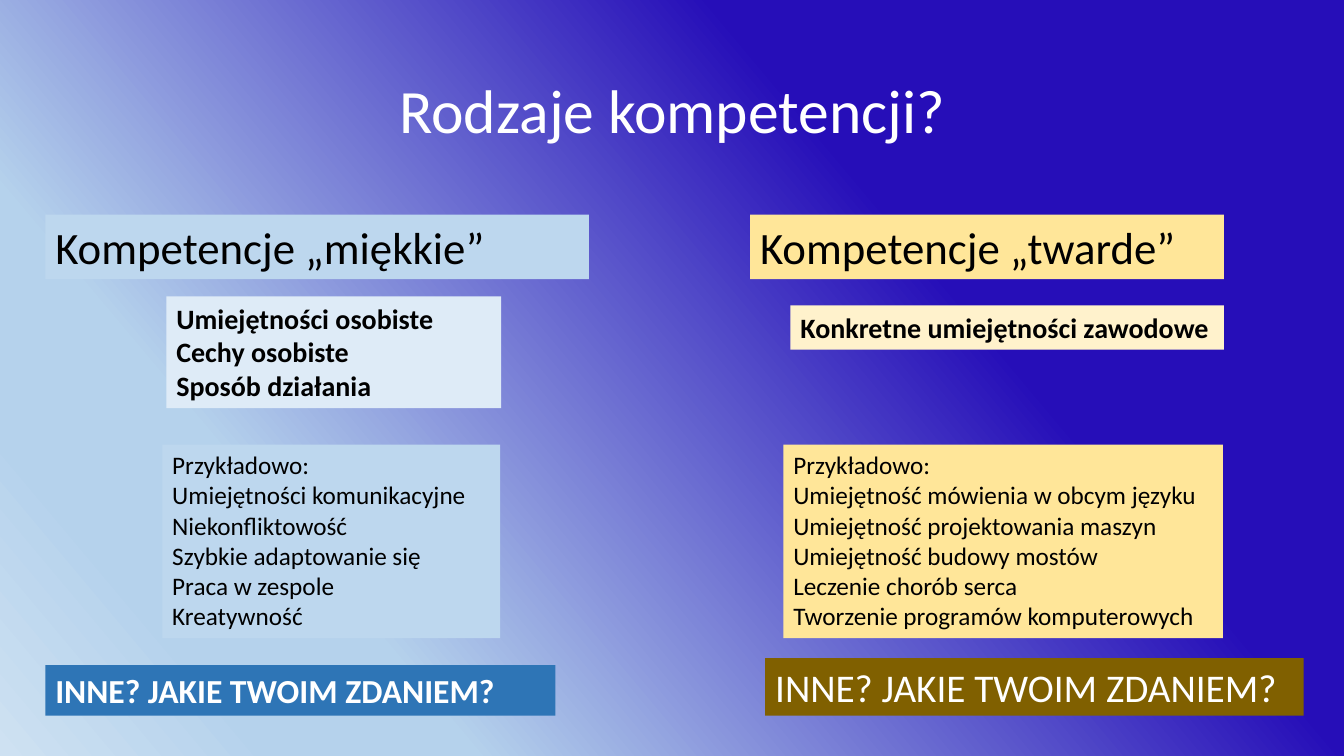
from copy import deepcopy

from pptx import Presentation
from pptx.dml.color import RGBColor
from pptx.enum.text import MSO_ANCHOR, MSO_AUTO_SIZE, PP_ALIGN
from pptx.oxml.ns import qn
from pptx.util import Inches, Pt

FONT = "Calibri"
BLACK = RGBColor(0x00, 0x00, 0x00)
WHITE = RGBColor(0xFF, 0xFF, 0xFF)
SKY = RGBColor(0xBD, 0xD7, 0xEE)
PALE_SKY = RGBColor(0xDE, 0xEB, 0xF7)
BLUE = RGBColor(0x2E, 0x75, 0xB6)
SAND = RGBColor(0xFF, 0xE6, 0x99)
PALE_SAND = RGBColor(0xFF, 0xF2, 0xCC)
BROWN = RGBColor(0x80, 0x60, 0x00)
GRADIENT = [
    (0.32, RGBColor(0x26, 0x0E, 0xB8)),
    (0.76, RGBColor(0xB5, 0xD2, 0xEC)),
    (0.86, RGBColor(0xB5, 0xD2, 0xEC)),
    (1.0, RGBColor(0xCE, 0xE1, 0xF2)),
]

COLUMN_TOP = 2.13
QUESTION = "INNE? JAKIE TWOIM ZDANIEM?"
SOFT_SKILLS = [
    ((0, 0, 5.39, 0.64), SKY, 32, False, BLACK, ["Kompetencje „miękkie”"]),
    ((1.2, 0.81, 3.32, 1.11), PALE_SKY, 20, True, BLACK,
     ["Umiejętności osobiste", "Cechy osobiste", "Sposób działania"]),
    ((1.16, 2.28, 3.35, 1.92), SKY, 18, False, BLACK,
     ["Przykładowo:", "Umiejętności komunikacyjne", "Niekonfliktowość",
      "Szybkie adaptowanie się", "Praca w zespole", "Kreatywność"]),
    ((0, 4.47, 5.06, 0.5), BLUE, 24, True, WHITE, [QUESTION]),
]
HARD_SKILLS = [
    ((0, 0, 4.7, 0.64), SAND, 32, False, BLACK, ["Kompetencje „twarde”"]),
    ((0.4, 0.9, 4.3, 0.44), PALE_SAND, 20, True, BLACK,
     ["Konkretne umiejętności zawodowe"]),
    ((0.33, 2.28, 4.36, 1.92), SAND, 18, False, BLACK,
     ["Przykładowo:", "Umiejętność mówienia w obcym języku",
      "Umiejętność projektowania maszyn", "Umiejętność budowy mostów",
      "Leczenie chorób serca", "Tworzenie programów komputerowych"]),
    ((0.15, 4.4, 5.34, 0.57), BROWN, 28, False, WHITE, [QUESTION]),
]


def format_text(paragraph, size, color, bold=False):
    for run in paragraph.runs:
        run.font.name = FONT
        run.font.size = Pt(size)
        run.font.bold = bold
        run.font.color.rgb = color


def paint_background(slide):
    fill = slide.background.fill
    fill.gradient()
    fill.gradient_angle = 220
    stop_list = next(slide.element.iter(qn("a:gsLst")))
    while len(stop_list) < len(GRADIENT):
        stop_list.append(deepcopy(stop_list[0]))
    for stop, (position, color) in zip(fill.gradient_stops, GRADIENT):
        stop.position = position
        stop.color.rgb = color


def add_heading(slide, left, top, width, height):
    heading = slide.shapes.title
    heading.left, heading.top = Inches(left), Inches(top)
    heading.width, heading.height = Inches(width), Inches(height)
    heading.text_frame.text = "Rodzaje kompetencji?"
    heading.text_frame.vertical_anchor = MSO_ANCHOR.MIDDLE
    paragraph = heading.text_frame.paragraphs[0]
    paragraph.alignment = PP_ALIGN.CENTER
    paragraph.line_spacing = 0.9
    format_text(paragraph, 44, WHITE)


def add_panel(slide, left, top, width, height, fill, size, bold, color, lines):
    panel = slide.shapes.add_textbox(
        Inches(left), Inches(top), Inches(width), Inches(height))
    panel.fill.solid()
    panel.fill.fore_color.rgb = fill
    frame = panel.text_frame
    frame.word_wrap = True
    frame.auto_size = MSO_AUTO_SIZE.SHAPE_TO_FIT_TEXT
    frame.text = "\n".join(lines)
    for paragraph in frame.paragraphs:
        format_text(paragraph, size, color, bold)


def add_skill_column(slide, left, top, panels):
    for (dx, dy, width, height), *style in panels:
        add_panel(slide, left + dx, top + dy, width, height, *style)


def main():
    deck = Presentation()
    deck.slide_width, deck.slide_height = Inches(13.33), Inches(7.5)
    slide = deck.slides.add_slide(deck.slide_layouts[5])
    paint_background(slide)
    add_heading(slide, 0.92, 0.4, 11.5, 1.45)
    add_skill_column(slide, 0.45, COLUMN_TOP, SOFT_SKILLS)
    add_skill_column(slide, 7.44, COLUMN_TOP, HARD_SKILLS)
    deck.save("out.pptx")


if __name__ == "__main__":
    main()
